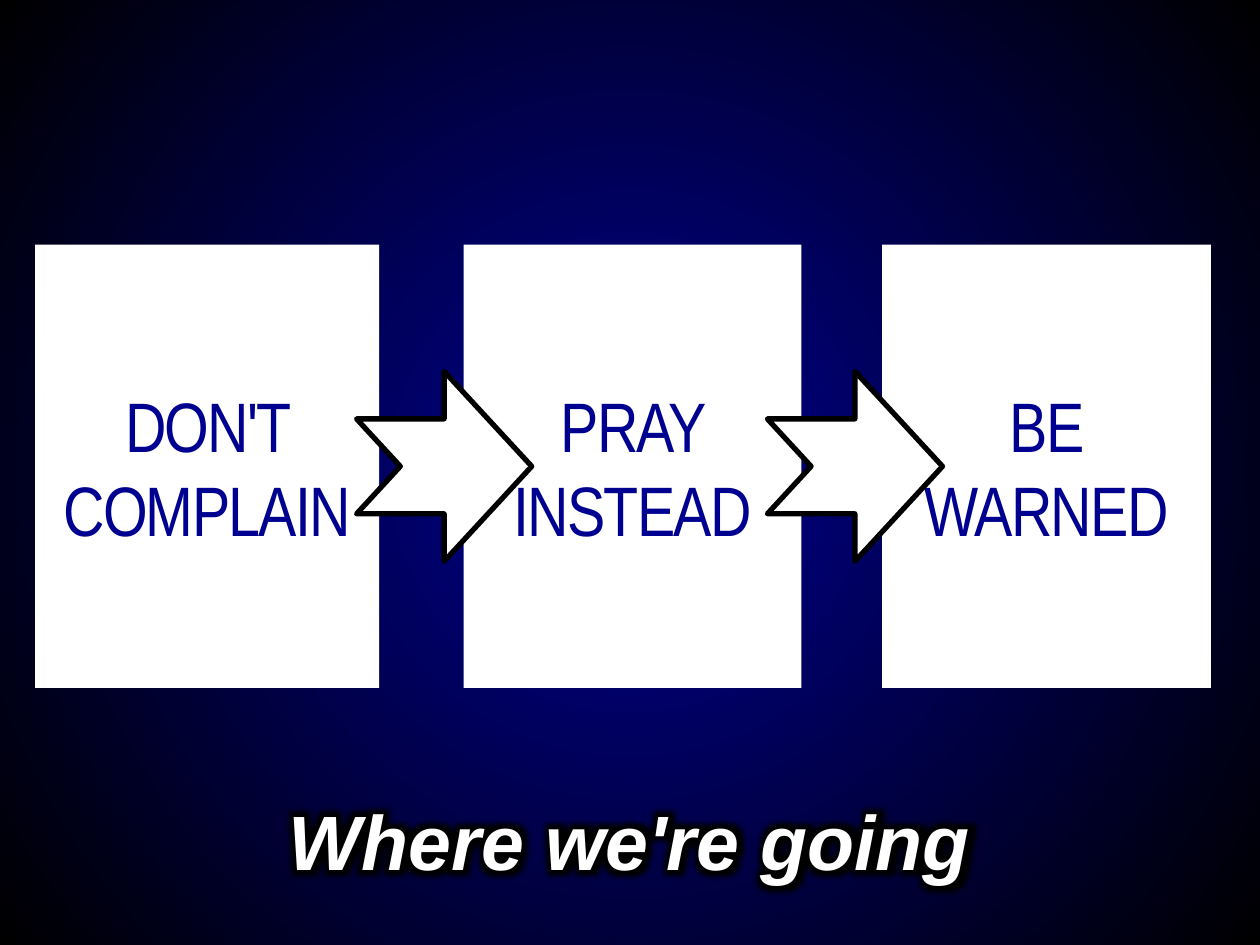
import dataclasses

import lxml.etree
import pptx
import pptx.dml.color
import pptx.enum.shapes
import pptx.enum.text
import pptx.oxml.ns
import pptx.util


@dataclasses.dataclass(frozen=True)
class Theme:
    """Colours, type formats and slide size in inches."""
    navy: str = "000090"
    black: str = "000000"
    white: str = "FFFFFF"
    width: float = 10
    height: float = 7.5
    outline: float = 3
    glow_radius: float = 15
    tracking: float = -1

    def title_format(self):
        """Return the font values of the title."""
        return {"name": "Arial", "size": pptx.util.Pt(44), "bold": True, "italic": True}

    def step_format(self):
        """Return the font values of a step."""
        return {"name": "Arial Narrow", "size": pptx.util.Pt(40)}


THEME = Theme()
SHAPES = pptx.enum.shapes.MSO_SHAPE


def rgb(value):
    """Turn a hex string into a colour."""
    return pptx.dml.color.RGBColor.from_string(value)


def add_node(parent, tag, **attributes):
    """Append a DrawingML element to a parent."""
    return lxml.etree.SubElement(parent, pptx.oxml.ns.qn(tag), attributes)


def place(left, top, width, height):
    """Turn shares of the slide's size into lengths."""
    shares = (left * THEME.width, top * THEME.height, width * THEME.width, height * THEME.height)
    return [pptx.util.Inches(share) for share in shares]


def paint_background(page):
    """Fill the page with a radial gradient, bright in the middle."""
    fill = page.background.fill
    fill.gradient()
    for stop, position, colour in zip(fill.gradient_stops, (0, 1), (THEME.navy, THEME.black)):
        stop.position = position
        stop.color.rgb = rgb(colour)
    linear = page.element.find(".//" + pptx.oxml.ns.qn("a:lin"))
    gradient = linear.getparent()
    gradient.remove(linear)
    radial = add_node(gradient, "a:path", path="circle")
    add_node(radial, "a:fillToRect", l="50000", t="50000", r="50000", b="50000")


def write(shape, text, colour, font_format):
    """Write centred text into a shape and return its span."""
    frame = shape.text_frame
    frame.word_wrap = True
    frame.vertical_anchor = pptx.enum.text.MSO_ANCHOR.MIDDLE
    para = frame.paragraphs[0]
    para.alignment = pptx.enum.text.PP_ALIGN.CENTER
    span = para.add_run()
    span.text = text
    span.font.color.rgb = rgb(colour)
    for name, value in font_format.items():
        setattr(span.font, name, value)
    return span


def add_white_shape(page, kind, area):
    """Add a plain white shape without outline or shadow."""
    shape = page.shapes.add_shape(kind, *place(*area))
    shape.shadow.inherit = False
    shape.fill.solid()
    shape.fill.fore_color.rgb = rgb(THEME.white)
    shape.line.fill.background()
    return shape


def add_step(page, text, area):
    """Add a white panel that names one step."""
    panel = add_white_shape(page, SHAPES.RECTANGLE, area)
    span = write(panel, text, THEME.navy, THEME.step_format())
    span.font._element.set("spc", str(int(THEME.tracking * 100)))


def add_arrow(page, area):
    """Add an outlined notched arrow."""
    arrow = add_white_shape(page, SHAPES.NOTCHED_RIGHT_ARROW, area)
    arrow.line.color.rgb = rgb(THEME.black)
    arrow.line.width = pptx.util.Pt(THEME.outline)


def add_title(page, text, area):
    """Add the title with a dark glow around its letters."""
    box = page.shapes.add_textbox(*place(*area))
    span = write(box, text, THEME.white, THEME.title_format())
    properties = span.font._element
    effects = add_node(properties, "a:effectLst")
    glow = add_node(effects, "a:glow", rad=str(pptx.util.Pt(THEME.glow_radius)))
    add_node(glow, "a:srgbClr", val=THEME.black)
    properties.find(pptx.oxml.ns.qn("a:solidFill")).addnext(effects)


def main():
    """Build the slide and save it."""
    deck = pptx.Presentation()
    deck.slide_width = pptx.util.Inches(THEME.width)
    deck.slide_height = pptx.util.Inches(THEME.height)
    page = deck.slides.add_slide(deck.slide_layouts[6])
    for holder in list(page.placeholders):
        holder.element.getparent().remove(holder.element)

    paint_background(page)
    add_title(page, "Where we're going", (0, 0.775, 1, 0.227))
    steps = (
        ("DON'T COMPLAIN", 0.028, 0.273),
        ("PRAY INSTEAD", 0.368, 0.268),
        ("BE WARNED", 0.7, 0.261),
    )
    for text, left, width in steps:
        add_step(page, text, (left, 0.259, width, 0.469))
    for left in (0.283, 0.609):
        add_arrow(page, (left, 0.393, 0.139, 0.201))
    deck.save("out.pptx")


if __name__ == "__main__":
    main()
